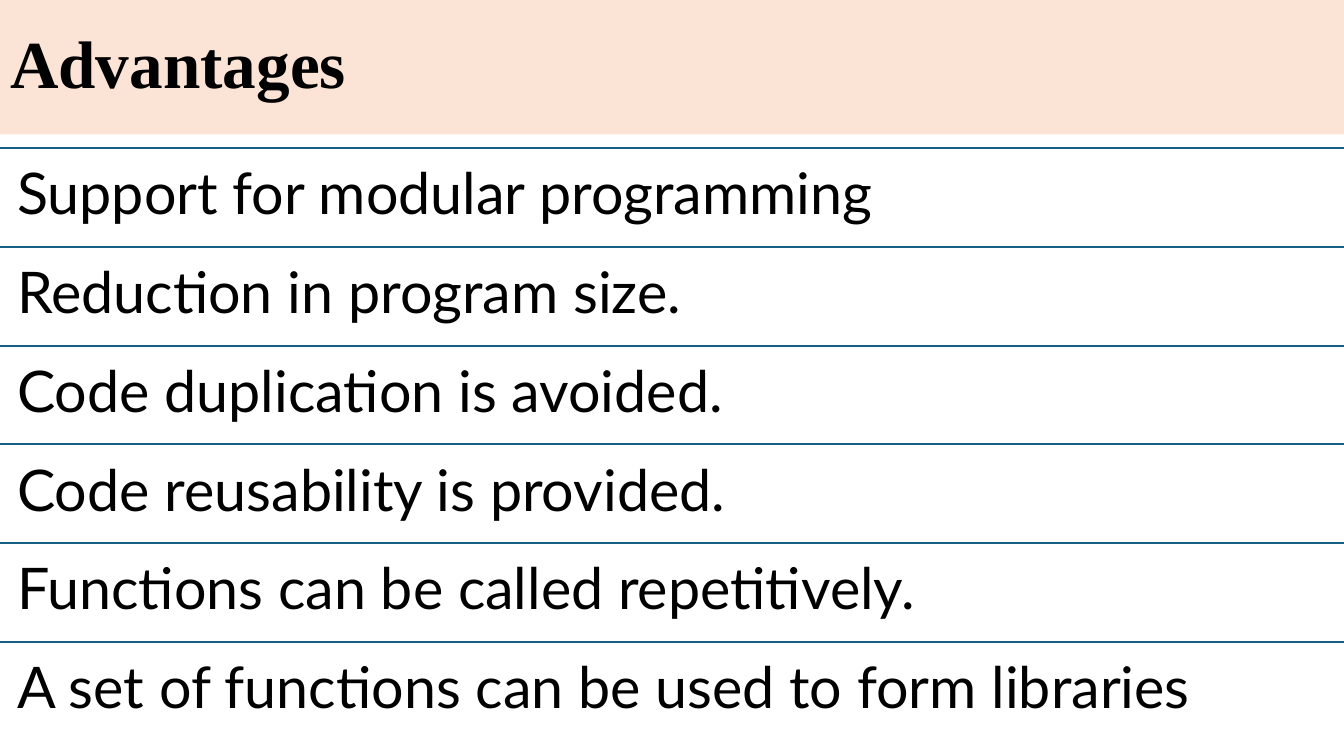
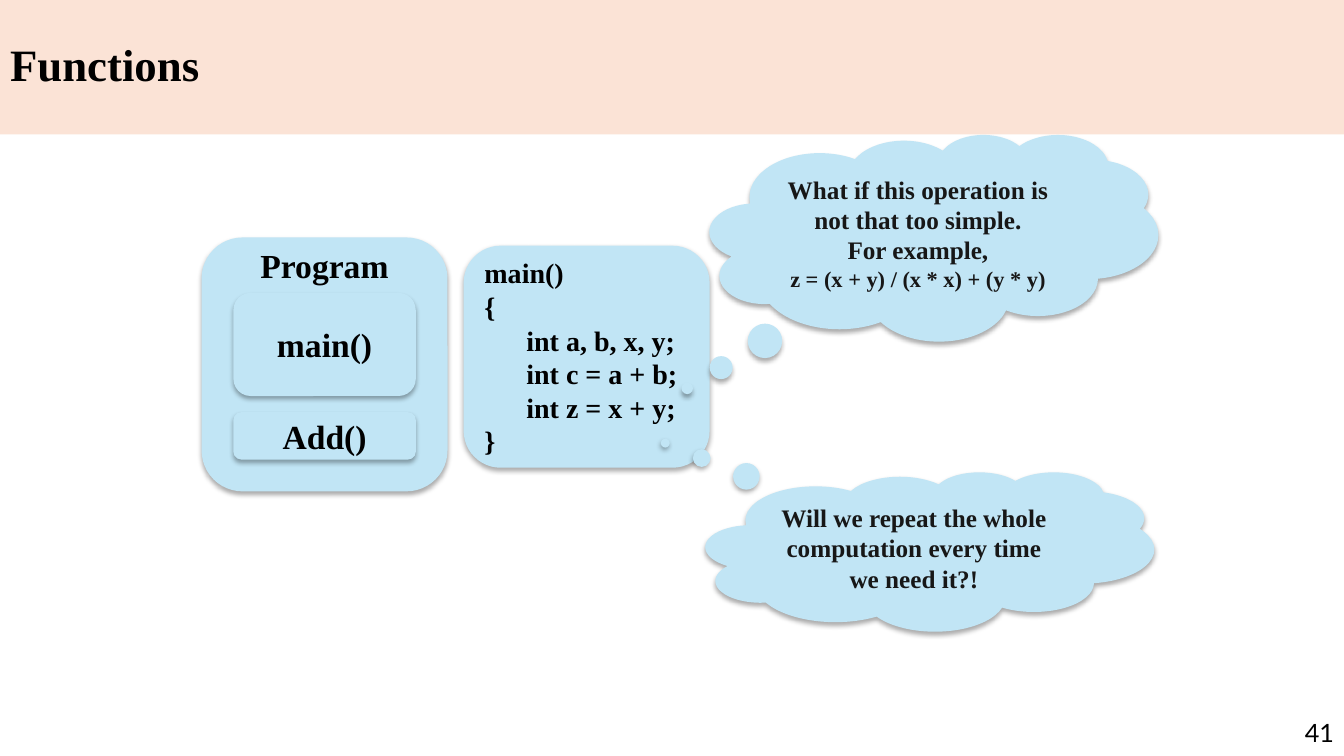
from lxml import etree
from pptx import Presentation
from pptx.dml.color import RGBColor
from pptx.enum import shapes, text
from pptx.oxml.ns import qn
from pptx.util import Pt

COLORS = {
    "band": "FBE3D6",
    "rule": "156082",
    "panel": "C1E5F5",
    "ink": "000000",
    "thought": "171717",
}
SERIF, SANS = "Times New Roman", "Lato"
WIDTH, HEIGHT = 960, 540
BAND_HEIGHT = 96
LIST_TOP, ROW_HEIGHT = 105.8, 70.56
ALIGN = text.PP_ALIGN
ANCHOR = text.MSO_ANCHOR
SHAPE = shapes.MSO_SHAPE

ADVANTAGES = [
    "Support for modular programming",
    "Reduction in program size.",
    "Code duplication is avoided.",
    "Code reusability is provided.",
    "Functions can be called repetitively.",
    "A set of functions can be used to form libraries",
]


def color(name):
    return RGBColor.from_string(COLORS[name])


def style_para(para, size, font=SERIF, bold=True, ink="ink", align=ALIGN.LEFT):
    para.alignment = align
    for span in para.runs:
        span.font.size = Pt(size)
        span.font.name = font
        span.font.bold = bold
        span.font.color.rgb = color(ink)


def set_indent(para, left):
    props = para._p.get_or_add_pPr()
    props.set("marL", str(Pt(left)))
    props.set("indent", "0")


def place(shape, left, top, width, height):
    shape.left, shape.top = Pt(left), Pt(top)
    shape.width, shape.height = Pt(width), Pt(height)


def add_page(deck, layout, title, size):
    """Add a slide with the shared title band."""
    page = deck.slides.add_slide(deck.slide_layouts[layout])
    band = page.shapes.title
    place(band, 0, 0, WIDTH, BAND_HEIGHT)
    band.fill.solid()
    band.fill.fore_color.rgb = color("band")
    frame = band.text_frame
    frame.text = title
    frame.vertical_anchor = ANCHOR.MIDDLE
    frame.auto_size = text.MSO_AUTO_SIZE.NONE
    frame.paragraphs[0].line_spacing = 0.9
    style_para(frame.paragraphs[0], size)
    return page


def add_rule(page, top):
    rule = page.shapes.add_connector(
        shapes.MSO_CONNECTOR.STRAIGHT, 0, Pt(top), Pt(WIDTH), Pt(top))
    rule.line.color.rgb = color("rule")
    rule.line.width = Pt(1.5)
    etree.SubElement(rule._element.spPr, qn("a:effectLst"))


def fill_ruled_list(page, items):
    """Fill the body placeholder and draw a rule above each item."""
    body = page.placeholders[1]
    place(body, 0, LIST_TOP, WIDTH, ROW_HEIGHT * len(items))
    frame = body.text_frame
    frame.auto_size = text.MSO_AUTO_SIZE.NONE
    frame.vertical_anchor = ANCHOR.TOP
    frame.margin_left = frame.margin_right = Pt(12.3)
    frame.margin_top = frame.margin_bottom = Pt(12.3)
    frame.text = "\n".join(items)
    for row, para in enumerate(frame.paragraphs):
        style_para(para, 41, SANS, bold=False)
        para.line_spacing = 0.9
        para.space_before = Pt(0)
        para.space_after = Pt(26.25)
        set_indent(para, 0)
        etree.SubElement(para._p.get_or_add_pPr(), qn("a:buNone"))
        add_rule(page, LIST_TOP + row * ROW_HEIGHT)


def add_soft_shadow(shape):
    shape.shadow.inherit = False
    effects = shape._element.spPr.find(qn("a:effectLst"))
    shadow = etree.SubElement(
        effects, qn("a:outerShdw"), blurRad=str(Pt(3.5)), dist=str(Pt(2.2)),
        dir="5400000", algn="ctr", rotWithShape="0")
    tone = etree.SubElement(shadow, qn("a:srgbClr"), val=COLORS["ink"])
    etree.SubElement(tone, qn("a:alpha"), val="32000")


def add_panel(page, kind, bounds, lines, ink="ink", align=ALIGN.CENTER):
    """Add a shadowed panel; each line is (text, size, indent)."""
    panel = page.shapes.add_shape(kind, *map(Pt, bounds))
    panel.fill.solid()
    panel.fill.fore_color.rgb = color("panel")
    panel.line.fill.background()
    add_soft_shadow(panel)
    frame = panel.text_frame
    frame.word_wrap = True
    frame.vertical_anchor = ANCHOR.MIDDLE
    frame.text = "\n".join(line[0] for line in lines)
    for para, (_, size, indent) in zip(frame.paragraphs, lines):
        style_para(para, size, ink=ink, align=align)
        set_indent(para, indent)
    return panel


def add_thought(page, bounds, tail, lines):
    cloud = add_panel(page, SHAPE.CLOUD_CALLOUT, bounds,
                      [(words, size, 0) for words, size in lines], "thought")
    cloud.adjustments[0], cloud.adjustments[1] = tail


def add_page_number(page, number):
    box = page.shapes.add_textbox(Pt(792), Pt(508.7), Pt(168), Pt(37.4))
    frame = box.text_frame
    frame.word_wrap = True
    frame.text = number
    style_para(frame.paragraphs[0], 18, SANS, bold=False, align=ALIGN.RIGHT)


def build_advantages(deck):
    page = add_page(deck, 1, "Advantages", 48)
    fill_ruled_list(page, ADVANTAGES)


def build_functions(deck):
    page = add_page(deck, 5, "Functions", 32)
    add_page_number(page, "41")

    # Program and the functions inside it
    program = add_panel(page, SHAPE.ROUNDED_RECTANGLE,
                        (144, 169.6, 175.7, 181.4), [("Program", 24, 0)])
    program.text_frame.vertical_anchor = ANCHOR.TOP
    program.text_frame.margin_top = 0
    program.text_frame.paragraphs[0].line_spacing = 0.9
    for name, top, height in (("main()", 209.2, 73.7), ("Add()", 294.5, 33.8)):
        add_panel(page, SHAPE.ROUNDED_RECTANGLE, (166.7, top, 130.3, height),
                  [(name, 24, 0)])

    # Code listing
    code = [("main()", 0), ("{", 0), ("int a, b, x, y;", 30),
            ("int c = a + b;", 30), ("int z = x + y;", 30), ("}", 0)]
    add_panel(page, SHAPE.ROUNDED_RECTANGLE, (331.2, 175.5, 175.7, 158.6),
              [(line, 20, indent) for line, indent in code], align=ALIGN.LEFT)

    # Thoughts about the code
    add_thought(page, (506.9, 95.9, 320.4, 147.6), (-0.55, 0.73),
                [("What if this operation is not that too simple.", 18),
                 ("For example,", 18),
                 ("z = (x + y) / (x * x) + (y * y)", 16)])
    add_thought(page, (504, 337, 320.4, 113.8), (-0.59, -0.68),
                [("Will we repeat the whole computation every time we need it?!",
                  18)])


def main():
    deck = Presentation()
    deck.slide_width, deck.slide_height = Pt(WIDTH), Pt(HEIGHT)
    build_advantages(deck)
    build_functions(deck)
    deck.save("out.pptx")


if __name__ == "__main__":
    main()
